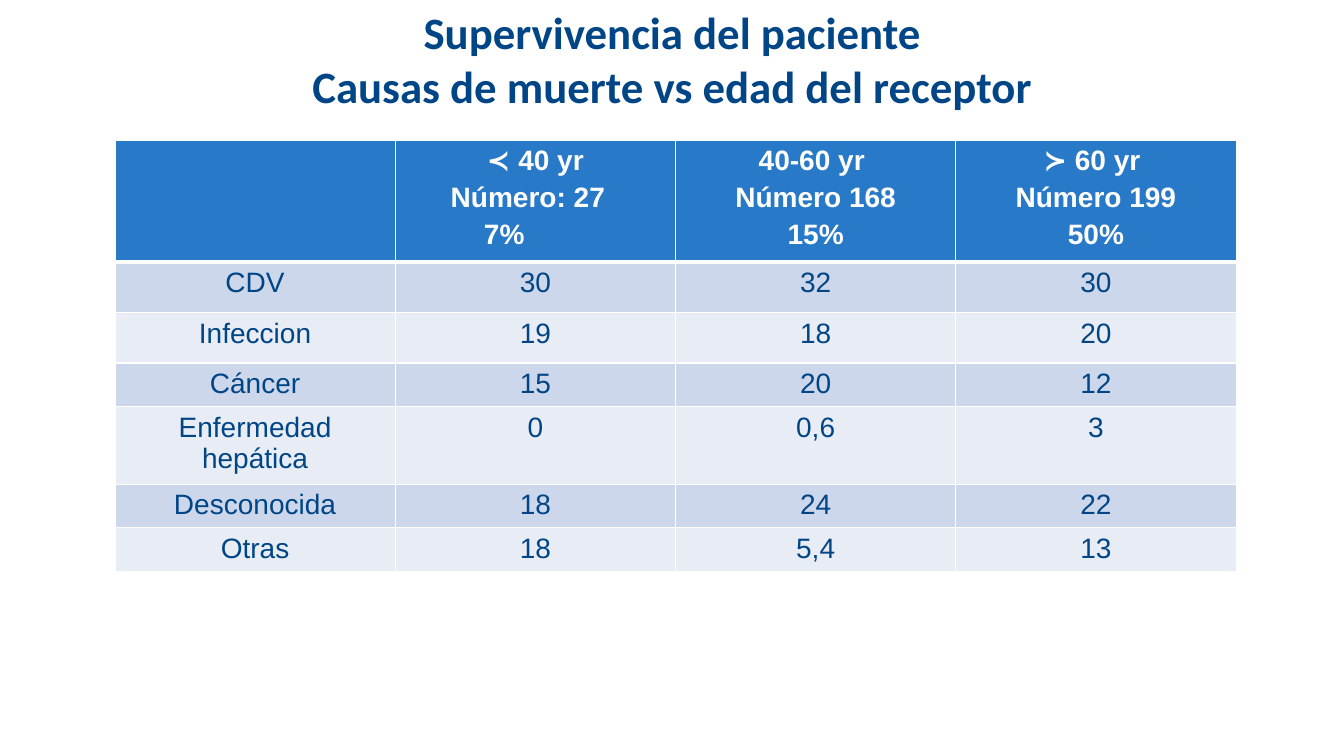
import pptx
import pptx.dml.color
import pptx.enum.text
import pptx.oxml.ns
import pptx.util
import lxml.etree

COLORS = {
    "navy": "004586",
    "header": "287AC8",
    "band_dark": "CDD7EB",
    "band_light": "E8ECF5",
    "white": "FFFFFF",
}
SLIDE_WIDTH, SLIDE_HEIGHT = 13.33, 7.5
TITLE_BOX = (0.67, 0, 12, 1.16)
TABLE_BOX = (1.14, 1.39, 11.12, 4.07)
ROW_HEIGHTS = (1.15, 0.5, 0.5, 0.4, 0.72, 0.4, 0.4)

TITLE = "Supervivencia del paciente\vCausas de muerte vs edad del receptor"
HEADERS = (
    (),
    ("≺ 40 yr", "Número: 27", "7%"),
    ("40-60 yr ", "Número 168", "15%"),
    ("≻ 60 yr ", "Número 199", "50%"),
)
# Header lines set off-centre: left indent in inches, by (column, line).
HEADER_INDENTS = {(1, 1): 0.45, (1, 2): 0.78}
CAUSES = (
    ("CDV", "30", "32", "30"),
    ("Infeccion", "19", "18", "20"),
    ("Cáncer", "15", "20", "12"),
    ("Enfermedad hepática", "0", "0,6", "3"),
    ("Desconocida", "18", "24", "22"),
    ("Otras", "18", "5,4", "13"),
)


def rgb(name):
    return pptx.dml.color.RGBColor.from_string(COLORS[name])


def write(para, text, *, size=20, font="Arial", color="navy", bold=False,
          indent=None, before=0):
    """Fill a paragraph: centred, or left-aligned from an indent in inches."""
    para.text = text
    align = pptx.enum.text.PP_ALIGN
    para.alignment = align.CENTER if indent is None else align.LEFT
    if indent is not None:
        para._p.get_or_add_pPr().set("marL", str(pptx.util.Inches(indent)))
    if before:
        para.space_before = pptx.util.Pt(before)
    for span in para.runs:
        span.font.size = pptx.util.Pt(size)
        span.font.name = font
        span.font.bold = bold
        span.font.color.rgb = rgb(color)


def style_cell(cell, fill, bottom_width=1):
    """Give a cell its white borders and its fill."""
    properties = cell._tc.get_or_add_tcPr()
    qn = pptx.oxml.ns.qn
    for side, width in (("L", 1), ("R", 1), ("T", 1), ("B", bottom_width)):
        border = lxml.etree.SubElement(
            properties, qn(f"a:ln{side}"), w=str(pptx.util.Pt(width)))
        solid = lxml.etree.SubElement(border, qn("a:solidFill"))
        lxml.etree.SubElement(solid, qn("a:srgbClr"), val=COLORS["white"])
    cell.fill.solid()
    cell.fill.fore_color.rgb = rgb(fill)


def add_title(page, box):
    frame = page.shapes.add_textbox(*map(pptx.util.Inches, box)).text_frame
    frame.word_wrap = True
    frame.margin_top = frame.margin_bottom = 0
    frame.vertical_anchor = pptx.enum.text.MSO_ANCHOR.MIDDLE
    write(frame.paragraphs[0], TITLE, size=32, font="Calibri", bold=True)


def fill_header(table):
    for column, lines in enumerate(HEADERS):
        cell = table.cell(0, column)
        style_cell(cell, "header", bottom_width=3)
        frame = cell.text_frame
        for number, line in enumerate(lines):
            para = frame.add_paragraph() if number else frame.paragraphs[0]
            write(para, line, color="white", bold=True,
                  indent=HEADER_INDENTS.get((column, number)),
                  before=4 if number else 0)


def add_causes_table(page, box):
    table = page.shapes.add_table(
        len(ROW_HEIGHTS), len(HEADERS), *map(pptx.util.Inches, box)).table
    for column in table.columns:
        column.width = pptx.util.Inches(box[2] / len(HEADERS))
    for row, height in zip(table.rows, ROW_HEIGHTS):
        row.height = pptx.util.Inches(height)
    fill_header(table)
    for row, values in enumerate(CAUSES, start=1):
        for column, value in enumerate(values):
            cell = table.cell(row, column)
            style_cell(cell, "band_dark" if row % 2 else "band_light")
            write(cell.text_frame.paragraphs[0], value)


def main():
    deck = pptx.Presentation()
    deck.slide_width = pptx.util.Inches(SLIDE_WIDTH)
    deck.slide_height = pptx.util.Inches(SLIDE_HEIGHT)
    page = deck.slides.add_slide(deck.slide_layouts[6])
    add_title(page, TITLE_BOX)
    add_causes_table(page, TABLE_BOX)
    deck.save("out.pptx")


if __name__ == "__main__":
    main()
